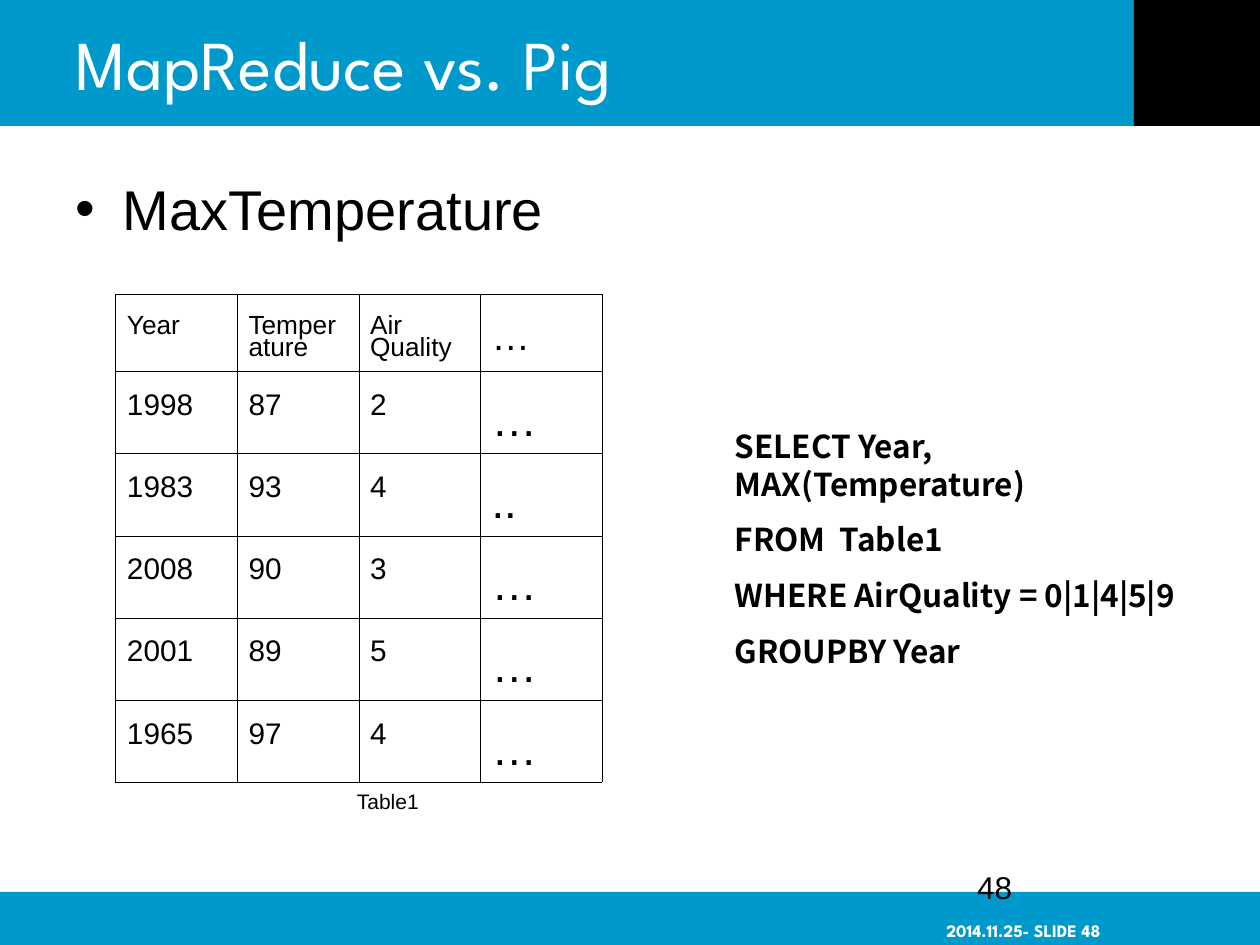
from pptx import Presentation, util as u
from pptx.dml.color import RGBColor
from pptx.enum import shapes, text
from pptx.oxml import parse_xml
from pptx.oxml.ns import nsdecls

THEME = {
    "blue": "0099CC", "black": "000000", "white": "FFFFFF",
    "head": "League Spartan", "body": "Arial", "code": "Noto Sans CJK SC",
    "title": 40, "list": 32, "query": 18, "page": 18, "note": 12, "foot": 10,
    "label": 15, "value": 17, "dots": 26, "headdots": 22,
}
TITLE = "MapReduce vs. Pig"
LIST = ["MaxTemperature"]
ROWS = [
    ("Year", "Temperature", "Air Quality", "…"),
    ("1998", "87", "2", "…"),
    ("1983", "93", "4", ".."),
    ("2008", "90", "3", "…"),
    ("2001", "89", "5", "…"),
    ("1965", "97", "4", "…"),
]
QUERY = [
    "SELECT Year, MAX(Temperature)",
    "FROM  Table1",
    "WHERE AirQuality = 0|1|4|5|9",
    "GROUPBY Year",
]
BANDS = [
    ("blue", 0, 0, 25.4, 2.54),
    ("blue", 0, 17.98, 25.4, 1.07),
    ("black", 22.86, 0, 2.54, 2.54),
]
LEFT, MID, RIGHT = text.PP_ALIGN.LEFT, text.PP_ALIGN.CENTER, text.PP_ALIGN.RIGHT
PAD = (0.23, 0.13, 0.23, 0.13)


def hue(name):
    return RGBColor.from_string(THEME[name])


def place(item, left, top, wide, high):
    item.left, item.top = u.Cm(left), u.Cm(top)
    item.width, item.height = u.Cm(wide), u.Cm(high)


def inset(part, pad):
    part.margin_left, part.margin_top, part.margin_right, part.margin_bottom = map(u.Cm, pad)


def write(frame, lines, size, font="body", ink="black", bold=False, align=LEFT, gap=0, lead=None):
    for i, line in enumerate(lines):
        para = frame.paragraphs[0] if i == 0 else frame.add_paragraph()
        para.alignment = align
        para.space_before = u.Pt(gap if i else 0)
        if lead:
            para.line_spacing = lead
        run = para.add_run()
        run.text = line
        run.font.name = THEME[font]
        run.font.size = u.Pt(THEME[size])
        run.font.bold = bold
        run.font.color.rgb = hue(ink)


def label(slide, box, lines, size, pad=PAD, grow=False, **style):
    frame = slide.shapes.add_textbox(*map(u.Cm, box)).text_frame
    frame.word_wrap = True
    inset(frame, pad)
    if grow:
        frame.auto_size = text.MSO_AUTO_SIZE.SHAPE_TO_FIT_TEXT
    write(frame, lines, size, **style)
    return frame


def border(cell):
    props = cell._tc.get_or_add_tcPr()
    for i, side in enumerate(("lnL", "lnR", "lnT", "lnB")):
        props.insert(i, parse_xml(
            f'<a:{side} {nsdecls("a")} w="{u.Pt(0.1)}"><a:solidFill>'
            f'<a:srgbClr val="{THEME["black"]}"/></a:solidFill></a:{side}>'))


def grid(slide, left, top, wide, first, high):
    count = len(ROWS[0])
    total = first + high * (len(ROWS) - 1)
    table = slide.shapes.add_table(
        len(ROWS), count, *map(u.Cm, (left, top, wide * count, total))).table
    table.first_row = table.horz_banding = False
    for col in table.columns:
        col.width = u.Cm(wide)
    for r, row in enumerate(ROWS):
        table.rows[r].height = u.Cm(high if r else first)
        for c, word in enumerate(row):
            cell = table.cell(r, c)
            cell.fill.background()
            border(cell)
            if c == count - 1:
                size, drop = ("dots", 0.69) if r else ("headdots", 0.61)
            else:
                size, drop = ("value", 0.48) if r else ("label", 0.46)
            inset(cell, (0.23, drop, 0.23, 0.13))
            write(cell.text_frame, [word], size, lead=0.76)


def main():
    deck = Presentation()
    deck.slide_width, deck.slide_height = u.Cm(25.4), u.Cm(19.05)
    slide = deck.slides.add_slide(deck.slide_layouts[1])
    title, body = slide.placeholders

    for i, (ink, *box) in enumerate(BANDS):
        band = slide.shapes.add_shape(shapes.MSO_SHAPE.RECTANGLE, *map(u.Cm, box))
        band.shadow.inherit = False
        band.fill.solid()
        band.fill.fore_color.rgb = hue(ink)
        band.line.fill.background()
        title.element.getparent().insert(2 + i, band.element)

    place(title, 1.27, 0, 21.59, 2.54)
    title.text_frame.vertical_anchor = text.MSO_ANCHOR.MIDDLE
    write(title.text_frame, [TITLE], "title", "head", "white")

    place(body, 1.27, 3.39, 22.86, 13.76)
    write(body.text_frame, LIST, "list")

    foot = label(slide, (18.85, 18.45, 3.33, 0.6), ["2014.11.25- SLIDE 48"], "foot",
                 pad=(0, 0, 0, 0), font="head", ink="white", bold=True, align=RIGHT)
    foot.vertical_anchor = text.MSO_ANCHOR.MIDDLE
    label(slide, (19.47, 17.36, 5.93, 1.27), ["48"], "page")
    grid(slide, 2.33, 5.93, 2.45, 1.55, 1.65)
    label(slide, (14.58, 8.48, 9.63, 5.18), QUERY, "query", grow=True,
          font="code", bold=True, gap=10.2)
    label(slide, (5.28, 15.77, 5.08, 0.76), ["Table1"], "note", grow=True, align=MID)
    deck.save("out.pptx")


if __name__ == "__main__":
    main()
